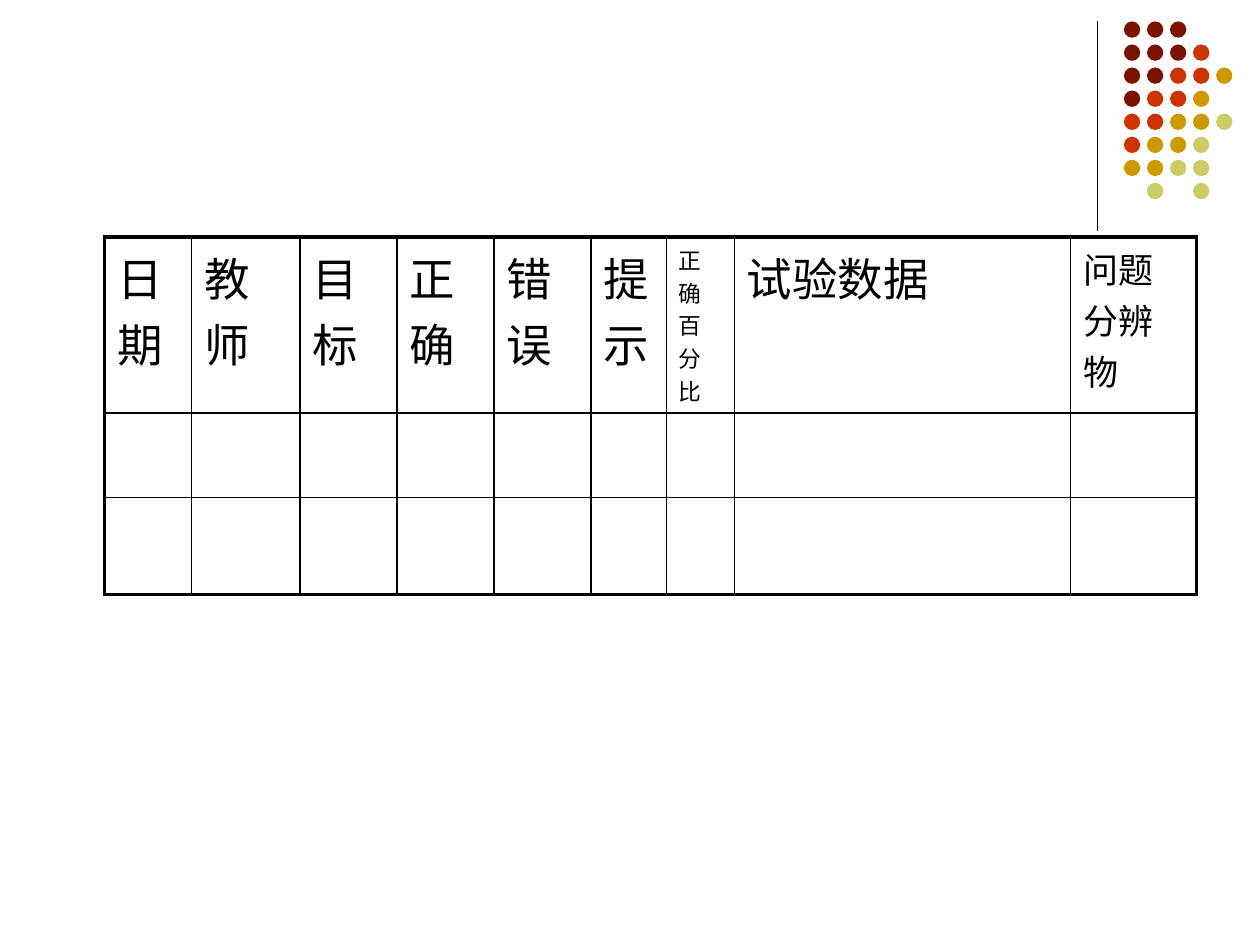
from dataclasses import dataclass

from lxml import etree
from pptx import Presentation, util as u
from pptx.dml.color import RGBColor
from pptx.enum import shapes
from pptx.oxml.ns import qn


@dataclass(frozen=True)
class Theme:
    font: str = "Arial"
    ink: str = "000000"
    maroon: str = "7C1302"
    red: str = "CC3300"
    gold: str = "CC9900"
    olive: str = "CCCC66"
    large: int = 26
    medium: int = 20
    small: int = 13
    rule: float = 0.75
    inner_border: float = 1
    outer_border: float = 2.25


class SlideBuilder:
    def __init__(self, slide, theme):
        self.slide = slide
        self.theme = theme

    def rule(self, x, top, bottom):
        divider = self.slide.shapes.add_connector(
            shapes.MSO_CONNECTOR.STRAIGHT,
            u.Inches(x), u.Inches(top), u.Inches(x), u.Inches(bottom))
        divider.line.color.rgb = RGBColor.from_string(self.theme.ink)
        divider.line.width = u.Pt(self.theme.rule)
        etree.SubElement(divider._element.spPr, qn("a:effectLst"))

    def dots(self, pattern, left, top, pitch, size):
        """Draw one dot per letter of pattern; a space leaves a gap."""
        palette = {"m": self.theme.maroon, "r": self.theme.red,
                   "g": self.theme.gold, "o": self.theme.olive}
        cluster = self.slide.shapes.add_group_shape()
        for row, letters in enumerate(pattern):
            for column, letter in enumerate(letters):
                if letter == " ":
                    continue
                dot = cluster.shapes.add_shape(
                    shapes.MSO_SHAPE.OVAL,
                    u.Inches(left + column * pitch), u.Inches(top + row * pitch),
                    u.Inches(size), u.Inches(size))
                dot.shadow.inherit = False
                dot.fill.solid()
                dot.fill.fore_color.rgb = RGBColor.from_string(palette[letter])
                dot.line.fill.background()

    def table(self, headings, widths, heights, left, top):
        """Draw a grid with a heavy frame; headings are (text, size) pairs."""
        grid = self.slide.shapes.add_table(
            len(heights), len(widths), u.Inches(left), u.Inches(top),
            u.Inches(sum(widths)), u.Inches(sum(heights))).table
        for option in ("first_row", "horz_banding"):
            setattr(grid, option, False)
        for column, width in zip(grid.columns, widths):
            column.width = u.Inches(width)
        for row, height in zip(grid.rows, heights):
            row.height = u.Inches(height)
        last_row, last_column = len(heights) - 1, len(widths) - 1
        for r, row in enumerate(grid.rows):
            for c, cell in enumerate(row.cells):
                on_frame = {"L": c == 0, "R": c == last_column,
                            "T": r == 0, "B": r == last_row}
                self.borders(cell, on_frame)
                cell.fill.background()
        for cell, (heading, size) in zip(grid.rows[0].cells, headings):
            self.heading(cell, heading, size)

    def borders(self, cell, on_frame):
        properties = cell._tc.get_or_add_tcPr()
        for side, heavy in on_frame.items():
            weight = self.theme.outer_border if heavy else self.theme.inner_border
            border = etree.SubElement(properties, qn(f"a:ln{side}"), w=str(u.Pt(weight)))
            fill = etree.SubElement(border, qn("a:solidFill"))
            etree.SubElement(fill, qn("a:srgbClr"), val=self.theme.ink)

    def heading(self, cell, heading, size):
        paragraph = cell.text_frame.paragraphs[0]
        paragraph.space_before = u.Pt(size * 0.2)
        run = paragraph.add_run()
        run.text = heading
        formats = {"name": self.theme.font, "size": u.Pt(size), "bold": False}
        for attribute, value in formats.items():
            setattr(run.font, attribute, value)
        run.font.color.rgb = RGBColor.from_string(self.theme.ink)


def main():
    deck = Presentation()
    deck.slide_width, deck.slide_height = u.Inches(10), u.Inches(7.5)
    theme = Theme()
    record = SlideBuilder(deck.slides.add_slide(deck.slide_layouts[6]), theme)

    record.rule(8.71, 0.17, 1.83)
    dot_rows = ["mmm", "mmmr", "mmrrg", "mrrg", "rrggo", "rggo", "ggoo", " o o"]
    record.dots(dot_rows, left=8.92, top=0.17, pitch=0.183, size=0.13)

    columns = [
        ("日期", theme.large, 0.69),
        ("教师", theme.large, 0.86),
        ("目标", theme.large, 0.77),
        ("正确", theme.large, 0.77),
        ("错误", theme.large, 0.77),
        ("提示", theme.large, 0.6),
        ("正确百分比", theme.small, 0.54),
        ("试验数据", theme.large, 2.67),
        ("问题分辨物", theme.medium, 1),
    ]
    record.table(
        headings=[(heading, size) for heading, size, _ in columns],
        widths=[width for _, _, width in columns],
        heights=[1.23, 0.67, 0.77], left=0.83, top=1.88)

    deck.save("out.pptx")


if __name__ == "__main__":
    main()
